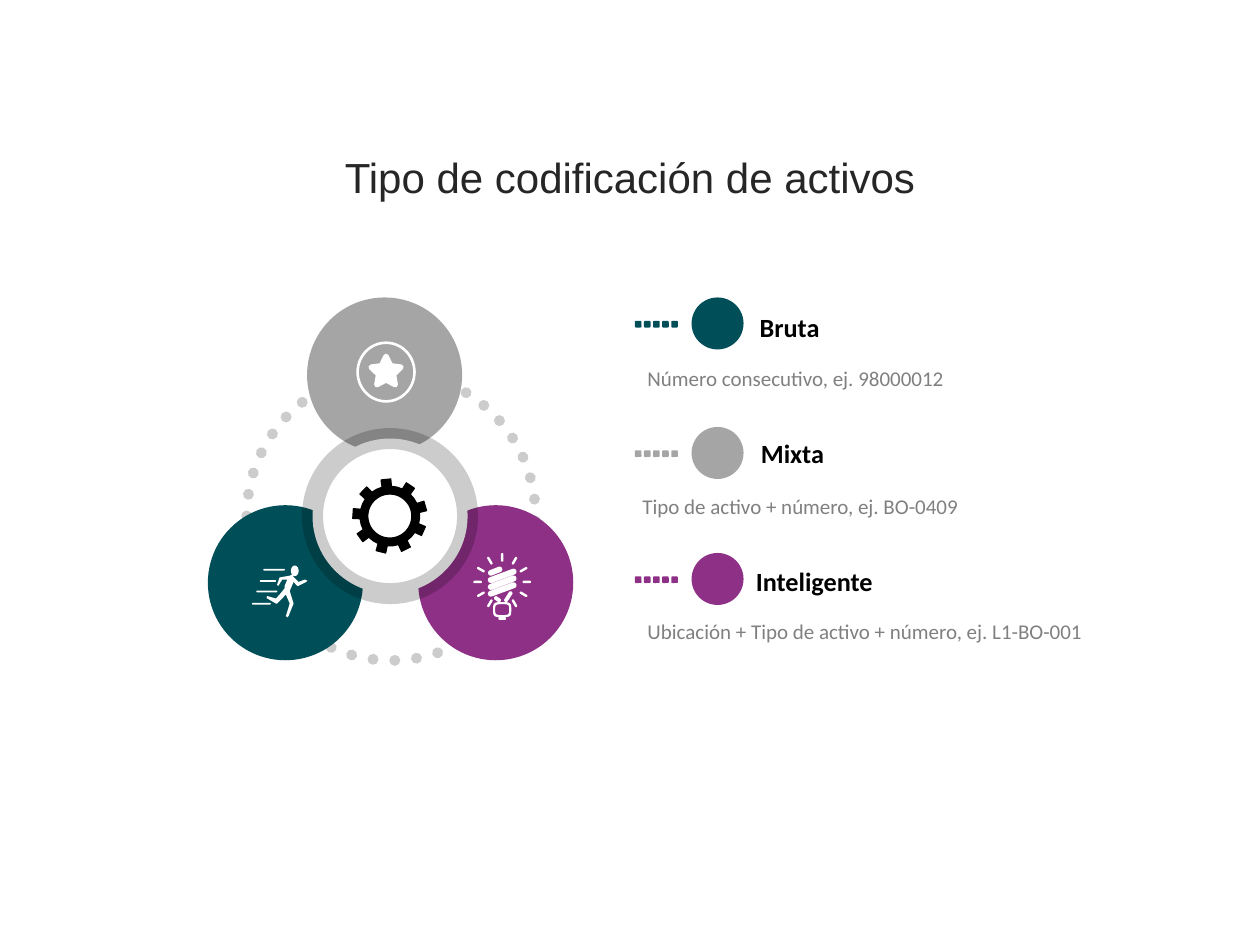
"""Build the slide on the three ways of coding assets."""
from dataclasses import dataclass
from math import atan2, cos, copysign, pi, radians, sin

from lxml import etree
from pptx import Presentation
from pptx import util as u
from pptx.dml.color import RGBColor
from pptx.enum import shapes, text
from pptx.oxml import ns


@dataclass(frozen=True)
class Theme:
    """Colours, fonts and type sizes."""
    teal: str = "004F58"
    grey: str = "A5A5A5"
    purple: str = "8E3086"
    white: str = "FFFFFF"
    black: str = "000000"
    title: str = "262626"
    detail: str = "808080"
    title_font: str = "Arial"
    body_font: str = "Calibri"
    title_size: int = 24
    label_size: int = 15
    detail_size: int = 12


THEME = Theme()
ROWS = [
    ("Bruta", "Número consecutivo, ej. 98000012", THEME.teal, 170, (427, 174.2), (362.9, 198)),
    ("Mixta", "Tipo de activo + número, ej. BO-0409", THEME.grey, 244, (427.7, 246.2), (360, 271.4)),
    ("Inteligente", "Ubicación + Tipo de activo + número, ej. L1-BO-001", THEME.purple, 316,
     (424.8, 319.7), (362.9, 342.7)),
]
RUNNER_BODY = [
    (175.7, 331.9), (174.2, 331.2), (170.6, 332.6), (167.8, 329.8), (167, 328.3), (165.6, 329),
    (159.8, 330), (158.4, 334.1), (159.1, 334.8), (161.3, 331.2), (164.2, 331.2), (162.7, 334.8),
    (162.7, 336.2), (159.8, 339.8), (157.7, 342), (152.6, 340.6), (152.4, 341.8), (157.7, 344.9),
    (158.4, 344.9), (163.4, 339.8), (165.6, 344.9), (163.4, 352.1), (164.2, 352.8), (164.9, 352.1),
    (167.8, 344.9), (165.6, 337.7), (167.8, 332.6), (169.9, 334.8), (170.6, 334.8), (175, 332.6),
]


def polar(centre, radius, degrees):
    """Return the point at a radius and angle from a centre."""
    return centre[0] + radius * cos(radians(degrees)), centre[1] + radius * sin(radians(degrees))


def oval(centre, radius_x, radius_y, power=1):
    """Return an oval contour; a power below one squares it off."""
    def bend(value):
        return copysign(abs(value) ** power, value)
    angles = [radians(step) for step in range(0, 360, 6)]
    return [(centre[0] + radius_x * bend(cos(angle)), centre[1] + radius_y * bend(sin(angle)))
            for angle in angles]


def capsule(start, end, width):
    """Return the contour of a thick round-ended stroke."""
    heading = atan2(end[1] - start[1], end[0] - start[0]) * 180 / pi
    return [polar(point, width / 2, heading + turn + step)
            for point, turn in ((end, -90), (start, 90)) for step in range(0, 181, 30)]


def paint(shape, fill=None, line=None, width=0.75):
    """Set fill and outline and remove the shadow."""
    shape.shadow.inherit = False
    if fill:
        shape.fill.solid()
        shape.fill.fore_color.rgb = RGBColor.from_string(fill)
    else:
        shape.fill.background()
    if line:
        shape.line.color.rgb = RGBColor.from_string(line)
        shape.line.width = u.Pt(width)
    else:
        shape.line.fill.background()


def add_preset(slide, kind, left, top, size, fill=None, line=None, width=0.75):
    """Add a square-sized preset shape."""
    shape = slide.shapes.add_shape(kind, u.Pt(left), u.Pt(top), u.Pt(size), u.Pt(size))
    paint(shape, fill, line, width)
    return shape


def fade_line(shape, percent):
    """Make the outline partly transparent."""
    colour = shape.line._get_or_add_ln().find(".//" + ns.qn("a:srgbClr"))
    etree.SubElement(colour, ns.qn("a:alpha"), val=str(percent * 1000))


def add_icon(slide, contours, fill, line=None):
    """Add one freeform made of several closed contours."""
    paths = [[(u.Pt(x), u.Pt(y)) for x, y in contour] for contour in contours]
    builder = slide.shapes.build_freeform(*paths[0][0], scale=1.0)
    builder.add_line_segments(paths[0][1:], close=True)
    for path in paths[1:]:
        builder.move_to(*path[0])
        builder.add_line_segments(path[1:], close=True)
    paint(builder.convert_to_shape(), fill, line)


def write(paragraph, words, font_name, size, colour, bold=False):
    """Add one formatted run."""
    run = paragraph.add_run()
    run.text = words
    run.font.name = font_name
    run.font.size = u.Pt(size)
    run.font.bold = bold
    run.font.color.rgb = RGBColor.from_string(colour)


def add_text(slide, position, extent, words, size, colour, bold=False, wrap=False, spacing=None):
    """Add a one-paragraph text box."""
    box = slide.shapes.add_textbox(*(u.Pt(value) for value in position + extent))
    box.text_frame.word_wrap = wrap
    paragraph = box.text_frame.paragraphs[0]
    paragraph.line_spacing = spacing
    write(paragraph, words, THEME.body_font, size, colour, bold)


def add_title(slide, words):
    """Place and format the title placeholder."""
    title = slide.shapes.title
    title.left, title.top, title.width, title.height = u.Pt(0), u.Pt(82), u.Pt(720), u.Pt(38)
    frame = title.text_frame
    frame.auto_size = text.MSO_AUTO_SIZE.NONE
    frame.vertical_anchor = text.MSO_ANCHOR.MIDDLE
    frame.paragraphs[0].alignment = text.PP_ALIGN.CENTER
    write(frame.paragraphs[0], words, THEME.title_font, THEME.title_size, THEME.title)


def add_circles(slide):
    """Add the dotted orbit, three outer circles and the hub."""
    ellipse = shapes.MSO_SHAPE.OVAL
    orbit = add_preset(slide, ellipse, 141, 212.4, 165, None, THEME.black, 6.25)
    fade_line(orbit, 20)
    outline = orbit.line._get_or_add_ln()
    outline.set("cap", "rnd")
    dash = etree.Element(ns.qn("a:prstDash"), val="sysDot")
    outline.find(ns.qn("a:solidFill")).addnext(dash)
    for left, top, colour in ((118.8, 288.7, THEME.teal), (175.5, 170, THEME.grey),
                              (239, 288.7, THEME.purple)):
        add_preset(slide, ellipse, left, top, 88.6, colour)
    hub = add_preset(slide, ellipse, 178.6, 250.6, 88.6, THEME.white, THEME.black, 12)
    fade_line(hub, 20)


def add_gear(slide):
    """Add the nine-toothed gear."""
    centre = (222.8, 294.9)
    teeth = [polar(centre, radius, -16 + 40 * tooth + turn) for tooth in range(9)
             for radius, turn in ((17, -9), (21.2, -7.5), (21.2, 7.5), (17, 9), (17, 20))]
    add_icon(slide, [teeth, oval(centre, 12.6, 12.6)], THEME.black, THEME.black)


def add_star(slide):
    """Add the star inside a thin ring."""
    centre = (220.6, 212.6)
    points = []
    for tip in range(-90, 270, 72):
        points += [polar(centre, 9.8, tip - 8), polar(centre, 10.5, tip),
                   polar(centre, 9.8, tip + 8), polar(centre, 6.2, tip + 36)]
    add_icon(slide, [oval(centre, 17, 17.5), oval(centre, 15.5, 16), points], THEME.white)


def add_runner(slide):
    """Add the runner with speed lines."""
    streaks = [capsule((left, y), (right, y), 1) for left, right, y in (
        (151, 162.3, 325.6), (149, 157.3, 332), (147, 158, 338), (144.5, 154.3, 345))]
    add_icon(slide, [RUNNER_BODY, oval((168.5, 326.2), 2.2, 3)] + streaks, THEME.white)


def add_bulb(slide):
    """Add the spiral bulb with its rays."""
    centre, base = (287, 332.6), (287, 348.4)
    rays = [capsule(polar(centre, 12.3, angle), polar(centre, 15.8, angle), 1.4)
            for angle in range(0, 360, 30) if angle != 90]
    coils = [capsule((280.5, y), (293.5, y - 4.8), 3.4) for y in (331.5, 335.4, 339.3)]
    coils.append(capsule((280.5, 327.4), (285.5, 325.4), 3.2))
    stem = [capsule((283.4, 341.8), (285.2, 343), 2.2), capsule((291.8, 339), (289.2, 343), 2.2)]
    socket = [oval(base, 5.2, 4.3, 0.5), oval(base, 4, 3.1, 0.5),
              capsule((285.6, 353.5), (288.4, 353.5), 1.6)]
    add_icon(slide, rays + coils + stem + socket, THEME.white)


def add_row(slide, label, detail, colour, top, label_at, detail_at):
    """Add one legend entry: dots, circle, label and detail."""
    for index in range(5):
        add_preset(slide, shapes.MSO_SHAPE.ROUNDED_RECTANGLE, 362.8 + 5.2 * index, top + 13.4, 3.8, colour)
    add_preset(slide, shapes.MSO_SHAPE.OVAL, 395.2, top, 29.7, colour)
    add_text(slide, label_at, (82, 25.2), label, THEME.label_size, THEME.black, bold=True)
    add_text(slide, detail_at, (301, 28.8), detail, THEME.detail_size, THEME.detail,
             wrap=True, spacing=1.5)


def main():
    """Build and save the presentation."""
    presentation = Presentation()
    presentation.slide_width, presentation.slide_height = u.Pt(720), u.Pt(540)
    slide = presentation.slides.add_slide(presentation.slide_layouts[5])
    add_title(slide, "Tipo de codificación de activos")
    add_circles(slide)
    for row in ROWS:
        add_row(slide, *row)
    for add_drawing in (add_gear, add_runner, add_bulb, add_star):
        add_drawing(slide)
    presentation.save("out.pptx")


if __name__ == "__main__":
    main()
